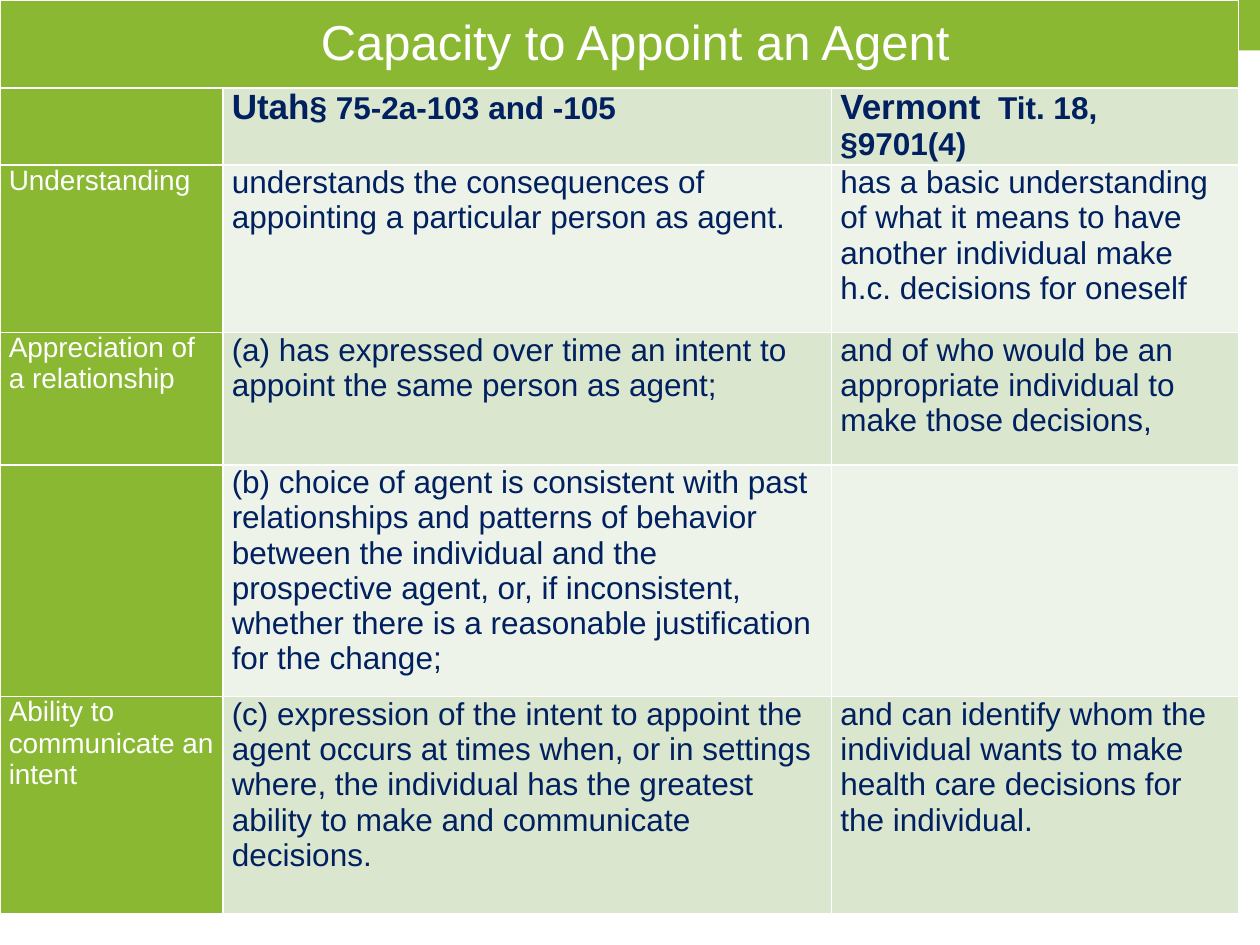
"""Build a one-slide table comparing two state rules on capacity to appoint an agent."""
from lxml import etree
from pptx import Presentation
from pptx import util as u
from pptx.dml.color import RGBColor
from pptx.enum import shapes, text
from pptx.oxml.ns import qn

PX = 9144
GREEN = RGBColor(0x8A, 0xB8, 0x33)
MID_GREEN = RGBColor(0xDA, 0xE6, 0xCE)
PALE_GREEN = RGBColor(0xED, 0xF3, 0xE8)
NAVY = RGBColor(0x00, 0x20, 0x60)
WHITE = RGBColor(0xFF, 0xFF, 0xFF)

COLUMNS = [177, 483, 323]
ROWS = [70, 61, 133, 105, 184, 172]
TITLE = "Capacity to Appoint an Agent"
STATES = [
    [("Utah", 20), ("§ 75-2a-103 and -105", 18)],
    [("Vermont", 20), ("  Tit. 18, §9701(4)", 18)],
]
CRITERIA = [
    ("Understanding",
     "understands the consequences of appointing a particular person as agent.",
     "has a basic understanding of what it means to have another individual make "
     "h.c. decisions for oneself"),
    ("Appreciation of a relationship",
     "(a) has expressed over time an intent to appoint the same person as agent;",
     "and of who would be an appropriate individual to make those decisions,"),
    ("",
     "(b) choice of agent is consistent with past relationships and patterns of behavior "
     "between the individual and the prospective agent, or, if inconsistent, whether there "
     "is a reasonable justification for the change;",
     ""),
    ("Ability to communicate an intent",
     "(c) expression of the intent to appoint the agent occurs at times when, or in settings "
     "where, the individual has the greatest ability to make and communicate decisions.",
     "and can identify whom the individual wants to make health care decisions for the "
     "individual."),
]


class SlideBuilder:
    """Hold the style and the current slide, and add each kind of element."""

    def __init__(self, slide, font="Arial", border=WHITE, border_pt=1):
        self.slide = slide
        self.font = font
        self.border = border
        self.border_pt = border_pt

    def bar(self, left, top, width, height, color):
        """Add a plain filled rectangle."""
        bar = self.slide.shapes.add_shape(
            shapes.MSO_SHAPE.RECTANGLE, left * PX, top * PX, width * PX, height * PX)
        bar.shadow.inherit = False
        bar.fill.solid()
        bar.fill.fore_color.rgb = color
        bar.line.fill.background()

    def table(self, left, top, columns, rows):
        """Add an unbanded table with the given column widths and row heights."""
        table = self.slide.shapes.add_table(
            len(rows), len(columns), left * PX, top * PX,
            sum(columns) * PX, sum(rows) * PX).table
        table.first_row = table.horz_banding = False
        for column, width in zip(table.columns, columns):
            column.width = width * PX
        for row, height in zip(table.rows, rows):
            row.height = height * PX
        return table

    def borders(self, cell):
        """Draw all four borders of a cell."""
        properties = cell._tc.get_or_add_tcPr()
        for side in ("lnL", "lnR", "lnT", "lnB"):
            line = etree.SubElement(
                properties, qn(f"a:{side}"), w=str(u.Pt(self.border_pt)))
            fill = etree.SubElement(line, qn("a:solidFill"))
            etree.SubElement(fill, qn("a:srgbClr"), val=str(self.border))

    def cell(self, cell, runs, fill, color, bold=False, align=text.PP_ALIGN.LEFT,
             inset_left=7, inset_top=0):
        """Fill a cell and write its (wording, size) runs."""
        self.borders(cell)
        cell.fill.solid()
        cell.fill.fore_color.rgb = fill
        cell.margin_left, cell.margin_right = inset_left * PX, 7 * PX
        cell.margin_top, cell.margin_bottom = inset_top * PX, 0
        paragraph = cell.text_frame.paragraphs[0]
        paragraph.alignment = align
        for wording, size in runs:
            run = paragraph.add_run()
            run.text = wording
            run.font.name = self.font
            run.font.size = u.Pt(size)
            run.font.bold = bold
            run.font.color.rgb = color


def main():
    deck = Presentation()
    deck.slide_width, deck.slide_height = 1000 * PX, 750 * PX
    builder = SlideBuilder(deck.slides.add_slide(deck.slide_layouts[6]))
    builder.bar(0, 0, 1000, 40, GREEN)

    comparison = builder.table(0, 0, COLUMNS, ROWS)
    comparison.cell(0, 0).merge(comparison.cell(0, 2))
    builder.cell(comparison.cell(0, 0), [(TITLE, 28)], GREEN, WHITE,
                 align=text.PP_ALIGN.CENTER, inset_left=32, inset_top=13)

    builder.cell(comparison.cell(1, 0), [], GREEN, WHITE)
    for column, state in enumerate(STATES, start=1):
        builder.cell(comparison.cell(1, column), state, MID_GREEN, NAVY, bold=True)

    for row, (criterion, *rules) in enumerate(CRITERIA, start=2):
        builder.cell(comparison.cell(row, 0),
                     [(criterion, 16)] if criterion else [], GREEN, WHITE)
        band = MID_GREEN if row % 2 else PALE_GREEN
        for column, rule in enumerate(rules, start=1):
            builder.cell(comparison.cell(row, column),
                         [(rule, 18)] if rule else [], band, NAVY)

    deck.save("out.pptx")


if __name__ == "__main__":
    main()
